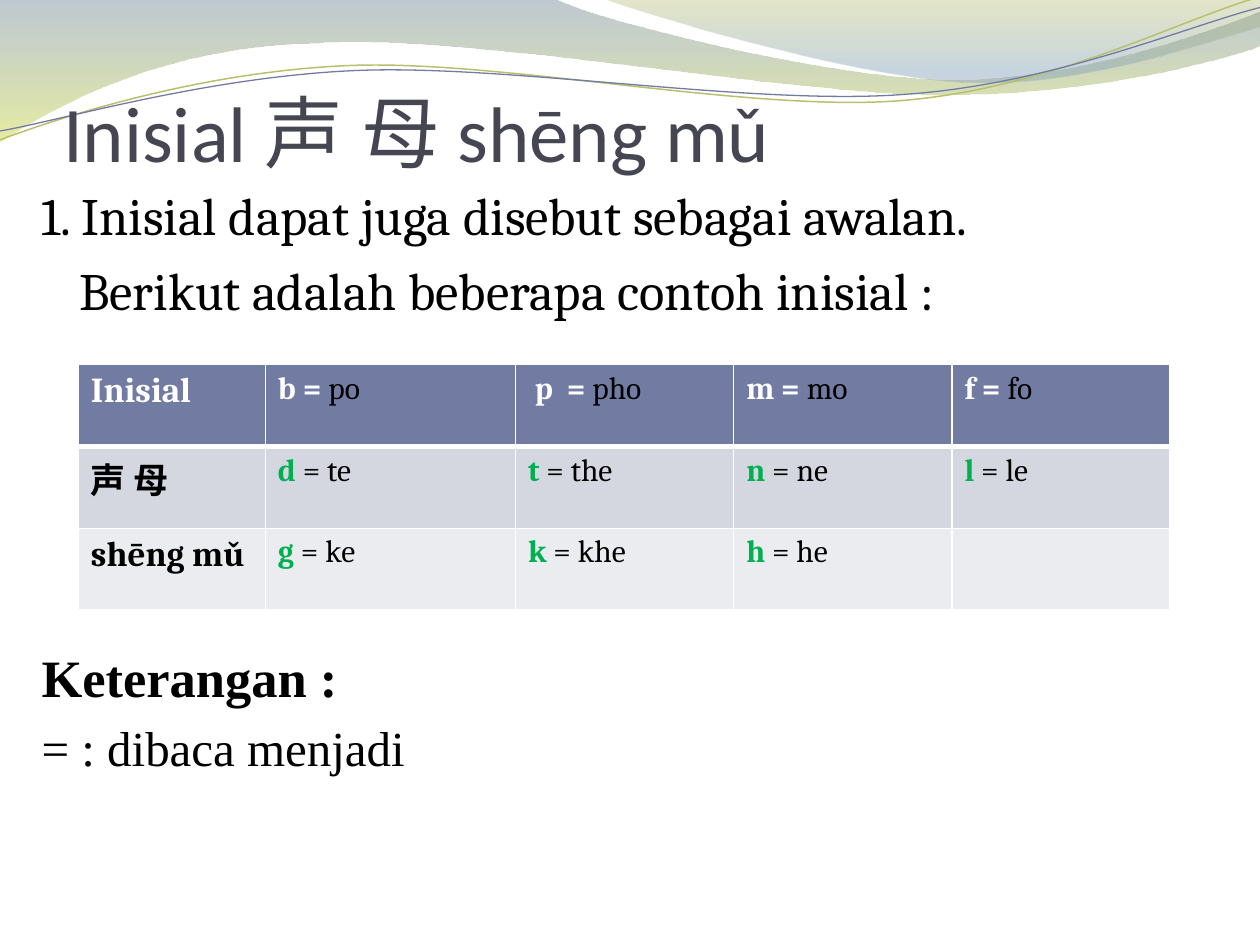
from math import cos, radians, sin

from lxml.etree import SubElement
from pptx import Presentation
from pptx.dml.color import RGBColor as RGB
from pptx.enum.text import MSO_ANCHOR as ANCHOR, MSO_AUTO_SIZE as FIT, PP_ALIGN as ALIGN
from pptx.oxml.ns import qn
from pptx.util import Cm, Pt

HEX = {
    "title": "464653", "ink": "000000", "white": "FFFFFF", "key": "00B050",
    "head": "727CA3", "odd": "D5D7E0", "even": "EBECF0",
    "slate": "72889B", "lime": "D3DE57", "olive": "A4AC50", "sky": "84A3BD",
    "leaf": "B9C06C",
}
INCH = 2.54
TILT = -2.7

# Outlines in inches: a pair is a straight step, six numbers are a Bezier curve.
BAND = [(0, 0), (4.4, -0.01), (4.76, 0.17, 6.64, 0.63, 7.58, 0.63),
        (8.53, 0.63, 9.58, 0.26, 10, 0.09), (10.01, 0.36),
        (9.83, 0.44, 8.7, 0.76, 7.46, 0.75), (6.22, 0.75, 3.82, 0.28, 2.57, 0.34),
        (1.29, 0.36, 0.46, 0.83, -0.01, 1.13)]
CREST = [(4.79, -0.01), (5.09, 0.11, 6.82, 0.62, 7.69, 0.65),
         (8.56, 0.69, 9.61, 0.32, 10, 0.21), (10, 0)]
GREEN = [(0, 1.11), (0.48, 0.93, 1.58, 0.57, 2.77, 0.52),
         (3.95, 0.47, 5.93, 0.89, 7.13, 0.8), (8.33, 0.71, 9.38, 0.15, 9.98, -0.02)]
BLUE = [(0, 1.04), (0.47, 0.96, 1.64, 0.61, 2.83, 0.56),
        (4.03, 0.51, 5.97, 0.84, 7.17, 0.75), (8.36, 0.67, 9.41, 0.21, 10, 0.06)]

# Each cell is a lead text and the text after it.
ROWS = [
    [("Inisial", ""), ("b = ", "po"), (" p  = ", "pho"), ("m = ", "mo"), ("f = ", "fo")],
    [("声 母", ""), ("d", " = te"), ("t", " = the"), ("n", " = ne"), ("l", " = le")],
    [("shēng mǔ", ""), ("g", " = ke"), ("k", " = khe"), ("h", " = he"), ("", "")],
]


def color(name):
    return RGB.from_string(HEX[name])


def style(font, name, size, ink="ink", bold=False):
    font.name, font.size, font.bold = name, Pt(size), bold
    font.color.rgb = color(ink)


def turn(step, mid, angle):
    """Turn the points of one step about mid."""
    c, s = cos(radians(angle)), sin(radians(angle))
    out = []
    for x, y in zip(step[::2], step[1::2]):
        dx, dy = x - mid[0], y - mid[1]
        out += [mid[0] + dx * c - dy * s, mid[1] + dx * s + dy * c]
    return out


def add_path(slide, path, close):
    """Add an outline behind the title, with true curves."""
    dots = [(Cm(x * INCH), Cm(y * INCH))
            for step in path for x, y in zip(step[::2], step[1::2])]
    pen = slide.shapes.build_freeform(*dots[0])
    pen.add_line_segments(dots[1:], close=close)
    shape = pen.convert_to_shape()
    lines = iter(list(shape.element.iter(qn("a:lnTo"))))
    for step in path[1:]:
        line = next(lines)
        if len(step) == 6:
            line.tag = qn("a:cubicBezTo")
            for _ in range(2):
                extra = next(lines)
                line.append(extra[0])
                extra.getparent().remove(extra)
    shape.shadow.inherit = False
    slide.shapes.title.element.addprevious(shape.element)
    return shape


def add_wave(slide, path, stops):
    """Add a filled wave; a stop is position, colour, opacity in percent."""
    shape = add_path(slide, path, True)
    shape.line.fill.background()
    shape.fill.gradient()
    shape.fill.gradient_angle = 270
    for stop, (pos, name, _) in zip(shape.fill.gradient_stops, stops):
        stop.position = pos
        stop.color.rgb = color(name)
    for tint, (_, _, solid) in zip(shape.element.spPr.iter(qn("a:srgbClr")), stops):
        SubElement(tint, qn("a:alpha")).set("val", str(solid * 1000))


def add_curve(slide, path, mid, name, width):
    """Add a thin line, laid flat and then tilted about mid."""
    shape = add_path(slide, [turn(step, mid, -TILT) for step in path], False)
    shape.rotation = TILT
    shape.fill.background()
    shape.line.color.rgb = color(name)
    shape.line.width = Pt(width)


def set_title(slide, text):
    title = slide.shapes.title
    title.left, title.top, title.width, title.height = Cm(1.27), Cm(1.58), Cm(22.86), Cm(2.01)
    frame = title.text_frame
    frame.text = text
    frame.auto_size = FIT.NONE
    frame.vertical_anchor = ANCHOR.BOTTOM
    frame.margin_left = frame.margin_right = frame.margin_bottom = 0
    para = frame.paragraphs[0]
    para.alignment = ALIGN.LEFT
    style(para.font, "Calibri", 45, "title")


def add_body(slide):
    frame = slide.shapes.add_textbox(Cm(0.59), Cm(3.56), Cm(24.2), Cm(14.88)).text_frame
    frame.word_wrap = True
    lines = [
        ("1. Inisial dapat juga disebut sebagai awalan.", "Cambria", 30, False, 0),
        ("Berikut adalah beberapa contoh inisial :", "Cambria", 30, False, 7),
        ("Keterangan :", "Times New Roman", 30, True, 185),
        ("= : dibaca menjadi", "Times New Roman", 28, False, 5.5),
    ]
    for i, (text, name, size, bold, gap) in enumerate(lines):
        para = frame.add_paragraph() if i else frame.paragraphs[0]
        para.text = text
        para.space_before = Pt(gap)
        style(para.font, name, size, bold=bold)
    frame.paragraphs[1]._p.get_or_add_pPr().set("marL", str(Cm(0.76)))


def set_edges(cell, row):
    """Draw white cell borders, thick between the head and the first row."""
    props = cell._tc.get_or_add_tcPr()
    for side in "LRTB":
        thick = (row, side) in ((0, "B"), (1, "T"))
        edge = SubElement(props, qn(f"a:ln{side}"), w=str(Pt(3 if thick else 1)))
        SubElement(SubElement(edge, qn("a:solidFill")), qn("a:srgbClr"), val=HEX["white"])


def fill_cell(cell, row, col, lead, rest):
    set_edges(cell, row)
    cell.fill.solid()
    cell.fill.fore_color.rgb = color(("head", "odd", "even")[row])
    para = cell.text_frame.paragraphs[0]
    size = 18 if col else 20
    ink = "white" if row == 0 else "key" if col else "ink"
    for text, tint, bold in ((lead, ink, True), (rest, "ink", False)):
        if text:
            run = para.add_run()
            run.text = text
            style(run.font, "Cambria", size, tint, bold)


def add_grid(slide):
    widths = [3.77, 5.04] + [4.4] * 3
    table = slide.shapes.add_table(len(ROWS), len(widths), Cm(1.58), Cm(7.35),
                                   Cm(sum(widths)), Cm(4.95)).table
    for col, width in zip(table.columns, widths):
        col.width = Cm(width)
    for r, cells in enumerate(ROWS):
        for c, (lead, rest) in enumerate(cells):
            fill_cell(table.cell(r, c), r, c, lead, rest)


def main():
    deck = Presentation()
    deck.slide_width, deck.slide_height = Cm(25.4), Cm(19.05)
    slide = deck.slides.add_slide(deck.slide_layouts[5])
    add_wave(slide, BAND, [(0, "slate", 45), (1, "lime", 55)])
    add_wave(slide, CREST, [(0, "olive", 30), (0.8, "sky", 45)])
    add_curve(slide, GREEN, (4.99, 0.58), "leaf", 0.85)
    add_curve(slide, BLUE, (5, 0.59), "head", 0.75)
    set_title(slide, "Inisial 声 母 shēng mǔ")
    add_body(slide)
    add_grid(slide)
    deck.save("out.pptx")


if __name__ == "__main__":
    main()
